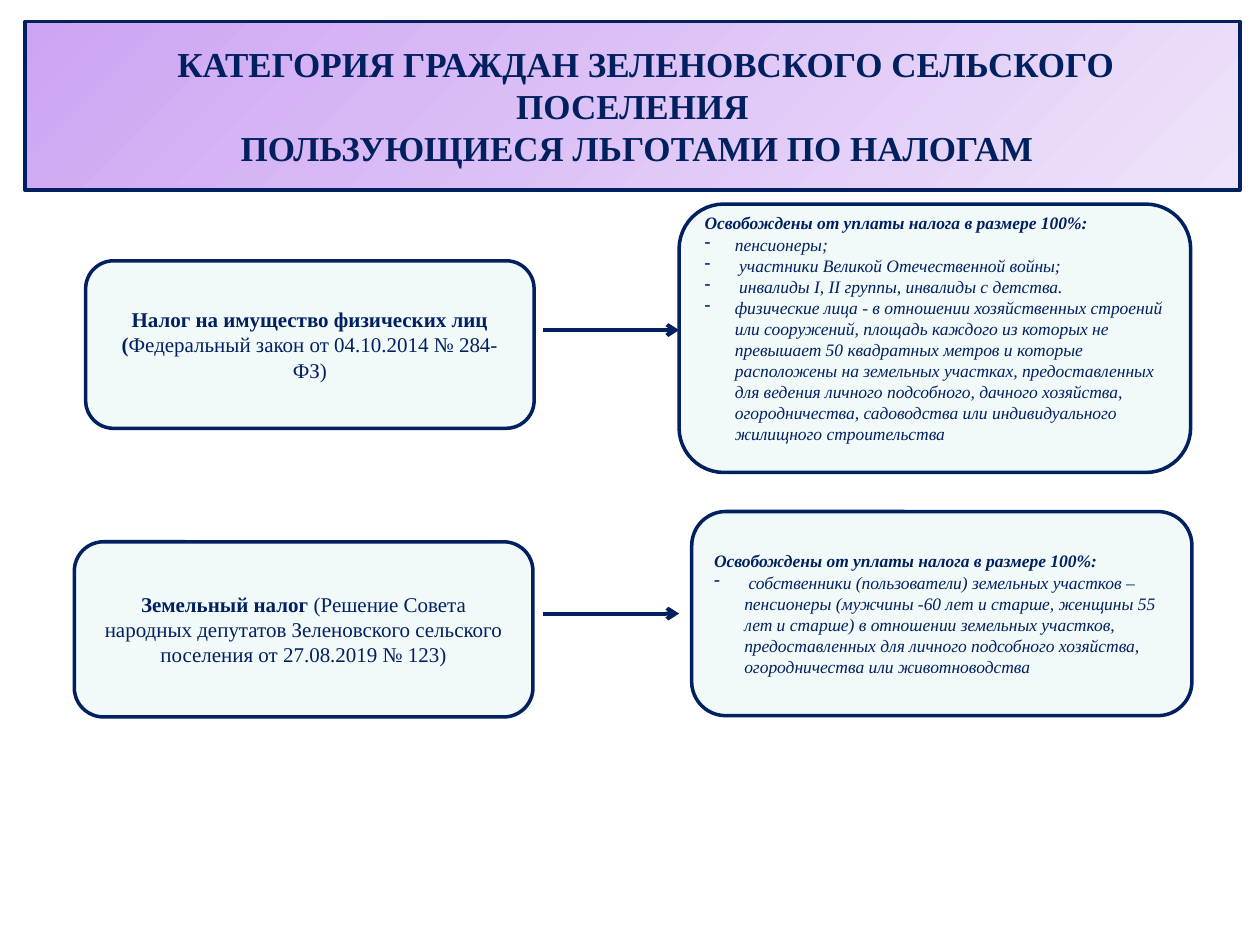
from lxml import etree
from pptx import Presentation, util as u
from pptx.dml.color import RGBColor
from pptx.enum import shapes, text
from pptx.oxml.ns import qn

THEME = {
    "font": "Times New Roman",
    "ink": RGBColor.from_string("002060"),
    "panel": RGBColor.from_string("F1F9F9"),
    "banner": [RGBColor.from_string(c) for c in ("CDA4F2", "EEE3FA")],
    "title": u.Pt(20), "tax": u.Pt(12), "benefit": u.Pt(10),
    "border": u.Pt(2), "arrow": u.Pt(2.25),
}
CELL = u.Inches(0.1)  # the page is a grid of 100 columns by 75 rows
BULLET_INDENT = u.Inches(0.24)

BOLD, PLAIN = {"bold": True}, {"bold": False}
HEADING, ITEM = {"bold": True, "italic": True}, {"bold": False, "italic": True}
EXEMPT = "Освобождены от уплаты налога в размере 100%:"

TITLE_LINES = [  # wording, first-line indent in inches
    ("КАТЕГОРИЯ ГРАЖДАН ЗЕЛЕНОВСКОГО СЕЛЬСКОГО ПОСЕЛЕНИЯ", 0.21),
    ("ПОЛЬЗУЮЩИЕСЯ ЛЬГОТАМИ ПО НАЛОГАМ", 0.07),
]
TAXES = [
    {
        "tax_at": (6.8, 20.7, 35.6, 13.3),
        "tax": [("Налог на имущество физических лиц (", BOLD),
                ("Федеральный закон от 04.10.2014 № 284-ФЗ)", PLAIN)],
        "benefit_at": (53.9, 16.2, 40.6, 21.3),
        "benefits": [
            "пенсионеры;",
            " участники Великой Отечественной войны;",
            " инвалиды I, II группы, инвалиды с детства.",
            "физические лица - в отношении хозяйственных строений или сооружений, "
            "площадь каждого из которых не превышает 50 квадратных метров и которые "
            "расположены на земельных участках, предоставленных для ведения личного "
            "подсобного, дачного хозяйства, огородничества, садоводства или "
            "индивидуального жилищного строительства",
        ],
        "bottom_inset": u.Inches(0.21),
        "arrow_row": 26.2,
    },
    {
        "tax_at": (5.9, 43, 36.4, 13.9),
        "tax": [("Земельный налог ", BOLD),
                ("(Решение Совета народных депутатов Зеленовского сельского "
                 "поселения от 27.08.2019 № 123)", PLAIN)],
        "benefit_at": (54.9, 40.6, 39.7, 16.2),
        "benefits": [
            " собственники (пользователи) земельных участков – пенсионеры "
            "(мужчины -60 лет и старше, женщины 55 лет и старше) в отношении "
            "земельных участков, предоставленных для личного подсобного "
            "хозяйства, огородничества или животноводства",
        ],
        "bottom_inset": u.Inches(0.05),
        "arrow_row": 48.7,
    },
]


def add_spans(para, size, spans):
    for wording, style in spans:
        span = para.add_run()
        span.text = wording
        span.font.color.rgb = THEME["ink"]
        for name, value in {"name": THEME["font"], "size": size, **style}.items():
            setattr(span.font, name, value)


def add_panel(page, at):
    """Add a bordered rounded box and return its text frame."""
    box = page.shapes.add_shape(shapes.MSO_SHAPE.ROUNDED_RECTANGLE,
                                *(round(n * CELL) for n in at))
    box.shadow.inherit = False
    box.fill.solid()
    box.fill.fore_color.rgb = THEME["panel"]
    box.line.color.rgb = THEME["ink"]
    box.line.width = THEME["border"]
    frame = box.text_frame
    frame.word_wrap = True
    frame.vertical_anchor = text.MSO_ANCHOR.MIDDLE
    return frame


deck = Presentation()
deck.slide_width, deck.slide_height = 100 * CELL, 75 * CELL
page = deck.slides.add_slide(deck.slide_layouts[5])

# Title banner: the title placeholder shaped as a rounded box
banner = page.shapes.title
place = {"left": 2, "top": 1.7, "width": 96.4, "height": 13.4}
for name, value in place.items():
    setattr(banner, name, round(value * CELL))
outline = etree.SubElement(banner.element.spPr, qn("a:prstGeom"), prst="roundRect")
etree.SubElement(outline, qn("a:avLst"))
banner.fill.gradient()
banner.fill.gradient_angle = 315
for stop, color in zip(banner.fill.gradient_stops, THEME["banner"]):
    stop.color.rgb = color
banner.line.color.rgb = THEME["ink"]
banner.line.width = THEME["border"]
frame = banner.text_frame
frame.word_wrap = True
frame.auto_size = text.MSO_AUTO_SIZE.NONE
frame.vertical_anchor = text.MSO_ANCHOR.MIDDLE
for number, (wording, indent) in enumerate(TITLE_LINES):
    para = frame.add_paragraph() if number else frame.paragraphs[0]
    para.alignment = text.PP_ALIGN.CENTER
    para._p.get_or_add_pPr().set("indent", str(u.Inches(indent)))
    add_spans(para, THEME["title"], [(wording, BOLD)])

# One row per tax: the tax, an arrow, and who is exempt
for row in TAXES:
    para = add_panel(page, row["tax_at"]).paragraphs[0]
    para.alignment = text.PP_ALIGN.CENTER
    add_spans(para, THEME["tax"], row["tax"])

    frame = add_panel(page, row["benefit_at"])
    frame.margin_bottom = row["bottom_inset"]
    para = frame.paragraphs[0]
    para.alignment = text.PP_ALIGN.LEFT
    add_spans(para, THEME["benefit"], [(EXEMPT, HEADING)])
    for benefit in row["benefits"]:
        para = frame.add_paragraph()
        para.alignment = text.PP_ALIGN.LEFT
        props = para._p.get_or_add_pPr()
        props.set("marL", str(BULLET_INDENT))
        props.set("indent", str(-BULLET_INDENT))
        etree.SubElement(props, qn("a:buChar"), char="-")
        add_spans(para, THEME["benefit"], [(benefit, ITEM)])

    level = round(row["arrow_row"] * CELL)
    arrow = page.shapes.add_connector(shapes.MSO_CONNECTOR.STRAIGHT,
                                      round(43.1 * CELL), level,
                                      round(53.9 * CELL), level)
    arrow.line.color.rgb = THEME["ink"]
    arrow.line.width = THEME["arrow"]
    etree.SubElement(arrow.line._get_or_add_ln(), qn("a:tailEnd"), type="arrow")
    etree.SubElement(arrow._element.spPr, qn("a:effectLst"))

deck.save("out.pptx")
